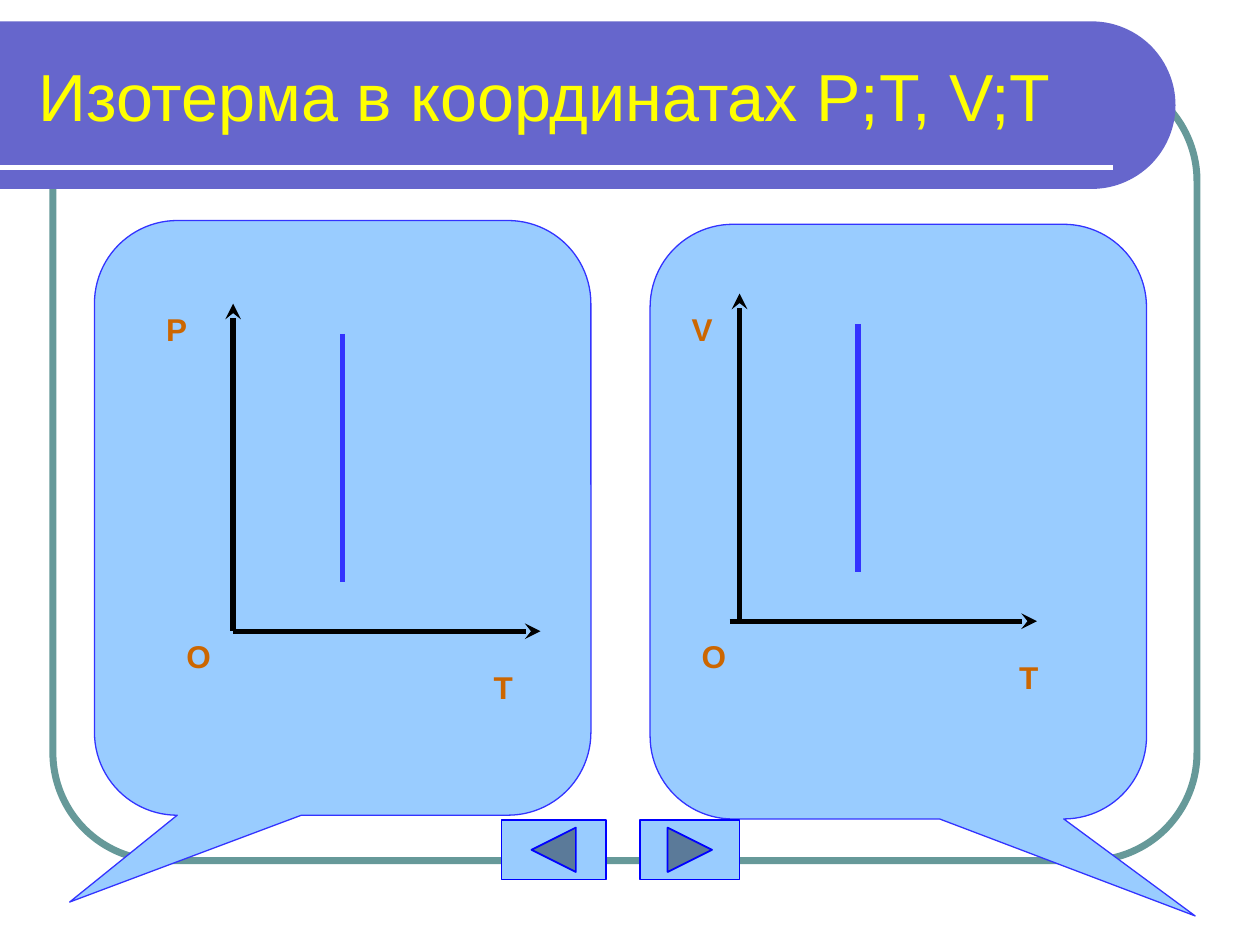
from dataclasses import dataclass
from math import cos, pi, sin

from lxml import etree
from pptx import Presentation
from pptx.dml.color import RGBColor
from pptx.enum.shapes import MSO_CONNECTOR, MSO_SHAPE
from pptx.enum.text import MSO_ANCHOR
from pptx.oxml.ns import qn
from pptx.util import Inches, Pt

STRAIGHT = MSO_CONNECTOR.STRAIGHT
ROUND_RECT = MSO_SHAPE.ROUNDED_RECTANGLE
CALLOUT = MSO_SHAPE.ROUNDED_RECTANGULAR_CALLOUT
BACK = MSO_SHAPE.ACTION_BUTTON_BACK_OR_PREVIOUS
FORWARD = MSO_SHAPE.ACTION_BUTTON_FORWARD_OR_NEXT
MIDDLE = MSO_ANCHOR.MIDDLE

FONT = "Arial"
COLORS = {
    "frame": "669999", "banner": "6666CC", "rule": "FFFFFF", "title": "FFFF00",
    "panel": "99CCFF", "isotherm": "3333FF", "axis": "000000",
    "label": "CC6600", "button": "0000FF",
}
PANEL_W, PANEL_H = 3.94, 4.72
AXIS_H, AXIS_W, ISOTHERM_H = 2.6, 2.44, 1.97


@dataclass
class Label:
    text: str
    x: float
    y: float
    w: float


@dataclass
class Graph:
    """Callout with a pair of axes and a vertical isotherm."""
    x: float
    y: float
    tail: tuple[float, float]
    axis_x: float
    origin: tuple[float, float]
    isotherm_x: float
    labels: list[Label]


GRAPHS = [
    Graph(0.75, 1.75, (-0.55, 0.646), 1.85, (1.85, 5.01), 2.72,
          [Label("P", 1.22, 2.41, 0.47), Label("T", 3.82, 5.25, 0.63),
           Label("O", 1.38, 5.01, 0.71)]),
    Graph(5.16, 1.78, (0.598, 0.663), 5.87, (5.79, 4.93), 6.81,
          [Label("V", 5.39, 2.41, 0.39), Label("T", 7.99, 5.17, 0.55),
           Label("O", 5.47, 5.01, 0.55)]),
]


def rgb(name: str) -> RGBColor:
    return RGBColor.from_string(COLORS[name])


def paint(s, fill: str | None, line: str | None, width: float = 0) -> None:
    s.shadow.inherit = False
    if fill:
        s.fill.solid()
        s.fill.fore_color.rgb = rgb(fill)
    else:
        s.fill.background()
    if line:
        s.line.color.rgb = rgb(line)
        s.line.width = Pt(width)
    else:
        s.line.fill.background()


def add_preset(shapes, kind, x: float, y: float, w: float, h: float,
               fill: str | None, line: str, width: float, adjust=()) -> None:
    s = shapes.add_shape(kind, Inches(x), Inches(y), Inches(w), Inches(h))
    for i, value in enumerate(adjust):
        s.adjustments[i] = value
    paint(s, fill, line, width)


def add_line(shapes, x1: float, y1: float, x2: float, y2: float,
             color: str, arrow: bool = False) -> None:
    s = shapes.add_connector(STRAIGHT, Inches(x1), Inches(y1), Inches(x2), Inches(y2))
    s.line.color.rgb = rgb(color)
    s.line.width = Pt(3)
    if arrow:
        etree.SubElement(s.line._get_or_add_ln(), qn("a:tailEnd"), type="stealth")
    etree.SubElement(s._element.spPr, qn("a:effectLst"))


def add_text(shapes, text: str, x: float, y: float, w: float, h: float,
             size: float, color: str, bold: bool = False, anchor=None) -> None:
    tf = shapes.add_textbox(Inches(x), Inches(y), Inches(w), Inches(h)).text_frame
    tf.word_wrap = True
    if anchor is not None:
        tf.vertical_anchor = anchor
    r = tf.paragraphs[0].add_run()
    r.text = text
    r.font.name = FONT
    r.font.size = Pt(size)
    r.font.bold = bold
    r.font.color.rgb = rgb(color)


def add_banner(shapes, top: float, bottom: float, right: float) -> None:
    """Bar from the left slide edge that ends in a half circle."""
    radius = (bottom - top) / 2
    cx, cy, steps = right - radius, top + radius, 60
    angles = [pi * (i / steps - 0.5) for i in range(steps + 1)]
    arc = [(Inches(cx + radius * cos(a)), Inches(cy + radius * sin(a))) for a in angles]
    builder = shapes.build_freeform(0, Inches(top))
    builder.add_line_segments(arc + [(0, Inches(bottom))], close=True)
    paint(builder.convert_to_shape(), "banner", None)


def add_graph(shapes, g: Graph) -> None:
    add_preset(shapes, CALLOUT, g.x, g.y, PANEL_W, PANEL_H,
               "panel", "isotherm", 0.75, (*g.tail, 0.167))
    ox, oy = g.origin
    add_line(shapes, g.axis_x, oy, g.axis_x, oy - AXIS_H, "axis", arrow=True)
    add_line(shapes, ox, oy, ox + AXIS_W, oy, "axis", arrow=True)
    top = oy - AXIS_H + 0.24
    add_line(shapes, g.isotherm_x, top, g.isotherm_x, top + ISOTHERM_H, "isotherm")
    for label in g.labels:
        add_text(shapes, label.text, label.x, label.y, label.w, 0.4, 18, "label", bold=True)


def main() -> None:
    prs = Presentation()
    prs.slide_width, prs.slide_height = Inches(10), Inches(7.5)
    shapes = prs.slides.add_slide(prs.slide_layouts[6]).shapes

    add_preset(shapes, ROUND_RECT, 0.42, 0.58, 9.08, 6.25, None, "frame", 4, (0.137,))
    add_banner(shapes, 0.17, 1.5, 9.33)
    add_line(shapes, 0, 1.33, 8.83, 1.33, "rule")
    add_text(shapes, "Изотерма в координатах P;T, V;T", 0.21, 0.25, 8.77, 1,
             38, "title", anchor=MIDDLE)
    for graph in GRAPHS:
        add_graph(shapes, graph)
    for kind, x, w in ((FORWARD, 5.08, 0.79), (BACK, 3.98, 0.83)):
        add_preset(shapes, kind, x, 6.51, w, 0.47, "panel", "button", 1)

    prs.save("out.pptx")


if __name__ == "__main__":
    main()
